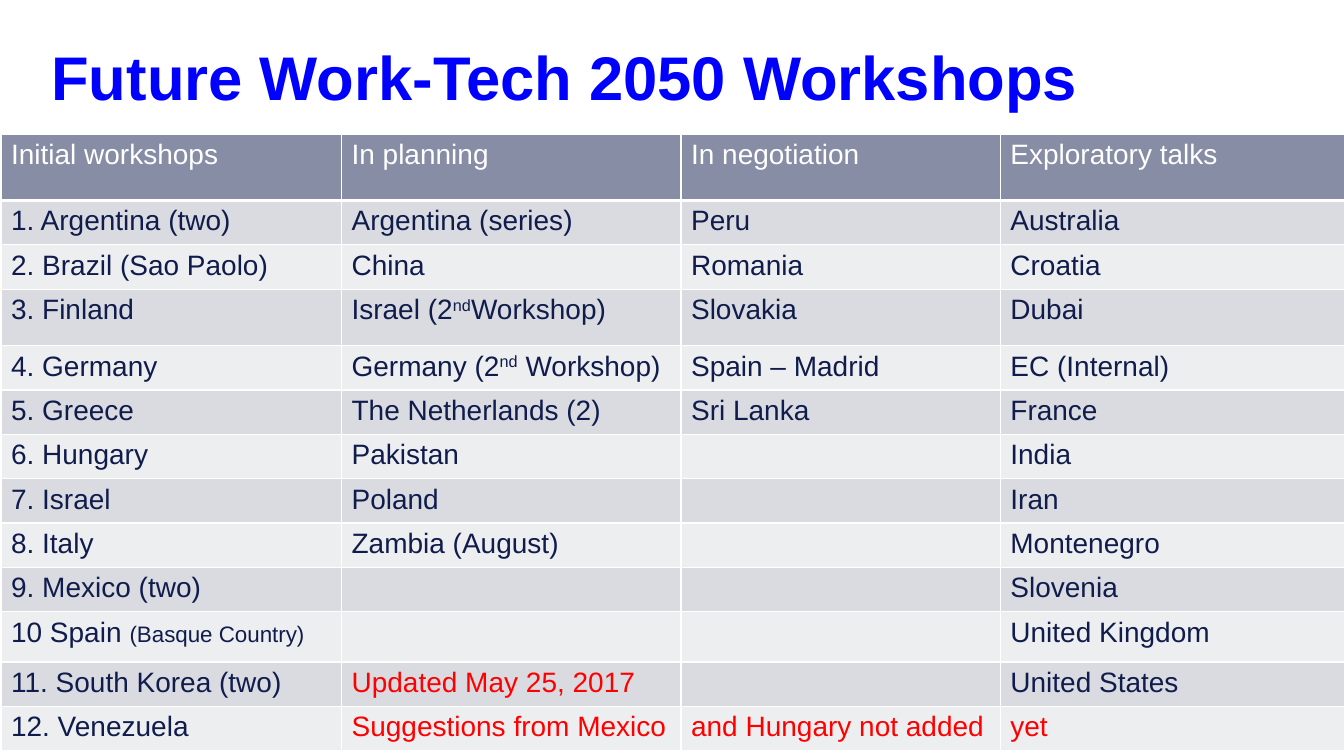
import pptx
import pptx.util
import pptx.dml.color
import pptx.enum.text
import pptx.oxml
import pptx.oxml.ns

Inches, Pt = pptx.util.Inches, pptx.util.Pt
RGB = pptx.dml.color.RGBColor.from_string

HUES = {"title": "0000FF", "head": "878DA5", "odd": "D9DBE1",
        "even": "EDEEF0", "text": "101C4B", "note": "FF0000", "white": "FFFFFF"}
FONT = {"name": "Arial", "size": Pt(20), "bold": False}
SMALL = {"size": Pt(16)}
RAISED = {"raise": 30000}

WIDTHS = [3.38, 3.37, 3.17, 3.42]
TALL = {0: 0.66, 3: 0.56, 10: 0.5}
NOTES = {(11, 1), (12, 1), (12, 2), (12, 3)}

# A cell is a string, or a list of (text, format) runs.
ROWS = [
    ["Initial workshops", "In planning", "In negotiation", "Exploratory talks"],
    ["1. Argentina (two)", "Argentina (series)", "Peru", "Australia"],
    ["2. Brazil (Sao Paolo)", "China", "Romania", "Croatia"],
    ["3. Finland", [("Israel (2", {}), ("nd", RAISED), ("Workshop)", {})],
     "Slovakia", "Dubai"],
    ["4. Germany", [("Germany (2", {}), ("nd", RAISED), (" Workshop)", {})],
     "Spain – Madrid", "EC (Internal)"],
    ["5. Greece", "The Netherlands (2)", "Sri Lanka", "France"],
    ["6. Hungary", "Pakistan", "", "India"],
    ["7. Israel", "Poland", "", "Iran"],
    ["8. Italy", "Zambia (August)", "", "Montenegro"],
    ["9. Mexico (two)", "", "", "Slovenia"],
    [[("10 Spain ", {}), ("(Basque Country)", SMALL)], "", "", "United Kingdom"],
    ["11. South Korea (two)", "Updated May 25, 2017", "", "United States"],
    ["12. Venezuela", "Suggestions from Mexico", "and Hungary not added", "yet"],
]


def add_run(para, text, hue, style):
    run = para.add_run()
    run.text = text
    for key, value in {**FONT, **style}.items():
        if key == "raise":
            run._r.get_or_add_rPr().set("baseline", str(value))
        else:
            setattr(run.font, key, value)
    run.font.color.rgb = RGB(HUES[hue])


def add_edges(cell, base):
    """Draw white cell borders; base is the bottom width in points."""
    props = cell._tc.get_or_add_tcPr()
    sides = {"lnL": 1, "lnR": 1, "lnT": 1, "lnB": base}
    for spot, (side, width) in enumerate(sides.items()):
        props.insert(spot, pptx.oxml.parse_xml(
            f'<a:{side} {pptx.oxml.ns.nsdecls("a")} w="{Pt(width)}"><a:solidFill>'
            f'<a:srgbClr val="{HUES["white"]}"/></a:solidFill></a:{side}>'))


def fill_cell(cell, data, row, col):
    cell.fill.solid()
    band = "head" if row == 0 else "odd" if row % 2 else "even"
    cell.fill.fore_color.rgb = RGB(HUES[band])
    add_edges(cell, 1 if row else 3)
    hue = "white" if row == 0 else "note" if (row, col) in NOTES else "text"
    runs = [(data, {})] if isinstance(data, str) else data
    for text, style in runs:
        if text:
            add_run(cell.text_frame.paragraphs[0], text, hue, style)


def add_title(slide, left, top, width, height):
    title = slide.shapes.title
    place = {"left": left, "top": top, "width": width, "height": height}
    for key, value in place.items():
        setattr(title, key, Inches(value))
    frame = title.text_frame
    form = {"margin_left": Inches(0.67), "margin_right": 0, "word_wrap": True,
            "vertical_anchor": pptx.enum.text.MSO_ANCHOR.BOTTOM,
            "auto_size": pptx.enum.text.MSO_AUTO_SIZE.NONE}
    for key, value in form.items():
        setattr(frame, key, value)
    para = frame.paragraphs[0]
    para.alignment = pptx.enum.text.PP_ALIGN.LEFT
    add_run(para, "Future Work-Tech 2050 Workshops", "title",
            {"size": Pt(44), "bold": True})


def add_grid(slide, left, top, width, height):
    box = [Inches(n) for n in (left, top, width, height)]
    table = slide.shapes.add_table(len(ROWS), len(WIDTHS), *box).table
    for col, size in enumerate(WIDTHS):
        table.columns[col].width = Inches(size)
    for row, cells in enumerate(ROWS):
        table.rows[row].height = Inches(TALL.get(row, 0.44))
        for col, data in enumerate(cells):
            fill_cell(table.cell(row, col), data, row, col)


def main():
    deck = pptx.Presentation()
    deck.slide_width, deck.slide_height = Inches(13.34), Inches(7.5)
    slide = deck.slides.add_slide(deck.slide_layouts[5])
    add_title(slide, -0.16, 0.17, 11.01, 1)
    add_grid(slide, 0.01, 1.33, 13.34, 6.17)
    deck.save("out.pptx")


if __name__ == "__main__":
    main()
